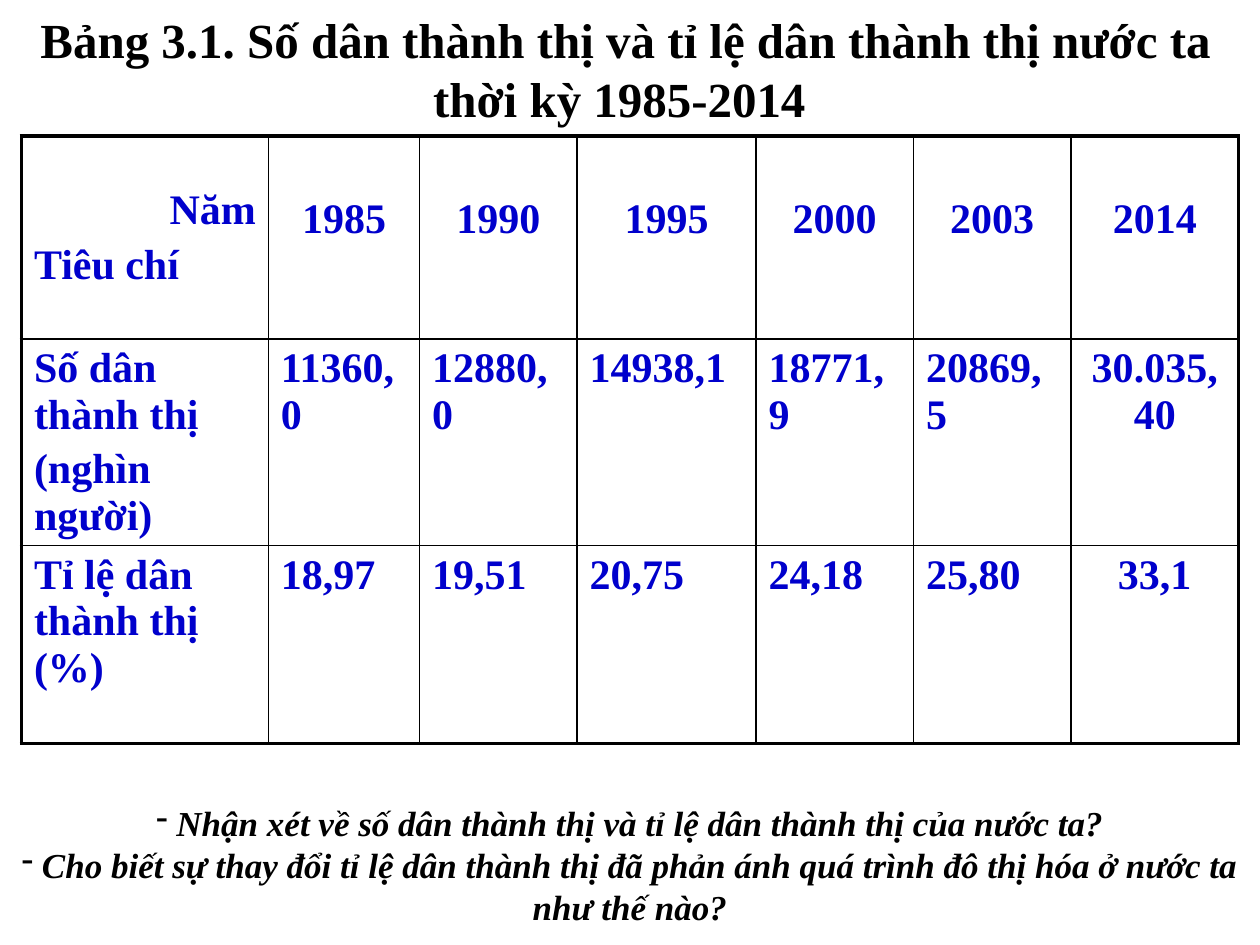
from dataclasses import dataclass

import pptx
import pptx.dml.color
import pptx.enum.text
import pptx.oxml
import pptx.oxml.ns
import pptx.util

Inches = pptx.util.Inches
Pt = pptx.util.Pt
RGBColor = pptx.dml.color.RGBColor
ALIGN = pptx.enum.text.PP_ALIGN
ANCHOR = pptx.enum.text.MSO_ANCHOR

FONT = "Times New Roman"
BLACK = RGBColor(0x00, 0x00, 0x00)
BLUE = RGBColor(0x00, 0x00, 0xCC)

OUTER, INNER = 2.25, 1
COL_WIDTHS = [1.96, 1.2, 1.25, 1.42, 1.25, 1.25, 1.33]
ROW_HEIGHTS = [1.61, 1.64, 1.57]


@dataclass
class Row:
    label: list[str]
    values: list[str]


ROWS = [
    Row(["Năm", "Tiêu chí"], ["1985", "1990", "1995", "2000", "2003", "2014"]),
    Row(["Số dân thành thị", "(nghìn người)"],
        ["11360,0", "12880,0", "14938,1", "18771,9", "20869,5", "30.035,40"]),
    Row(["Tỉ lệ dân thành thị (%)"],
        ["18,97", "19,51", "20,75", "24,18", "25,80", "33,1"]),
]
QUESTIONS = [
    " Nhận xét về số dân thành thị và tỉ lệ dân thành thị của nước ta?",
    " Cho biết sự thay đổi tỉ lệ dân thành thị đã phản ánh quá trình đô thị hóa "
    "ở nước ta như thế nào?",
]


def add_lines(tf, lines: list[str], size: float, color: RGBColor,
              align=ALIGN.LEFT, italic: bool = False, before: float = 0) -> None:
    """Write each line as one bold paragraph of the text frame."""
    for i, text in enumerate(lines):
        p = tf.add_paragraph() if i else tf.paragraphs[0]
        p.alignment = align
        p.space_before = Pt(before)
        r = p.add_run()
        r.text = text
        r.font.name = FONT
        r.font.size = Pt(size)
        r.font.bold = True
        r.font.italic = italic
        r.font.color.rgb = color


def set_border(cell, side: str, width: float) -> None:
    cell._tc.get_or_add_tcPr().append(pptx.oxml.parse_xml(
        f'<a:ln{side} {pptx.oxml.ns.nsdecls("a")} w="{Pt(width)}">'
        f'<a:solidFill><a:srgbClr val="{BLACK}"/></a:solidFill></a:ln{side}>'))


def add_bullet(p, char: str) -> None:
    pPr = p._p.get_or_add_pPr()
    pPr.set("marL", "0")
    pPr.set("indent", "0")
    for tag in ("<a:buFontTx {}/>", f'<a:buChar {{}} char="{char}"/>'):
        pPr.append(pptx.oxml.parse_xml(tag.format(pptx.oxml.ns.nsdecls("a"))))


def add_title(s, text: str) -> None:
    sp = s.shapes.title
    sp.left, sp.top = Inches(0), Inches(0)
    sp.width, sp.height = Inches(9.83), Inches(1.08)
    tf = sp.text_frame
    tf.word_wrap = True
    tf.auto_size = pptx.enum.text.MSO_AUTO_SIZE.NONE
    tf.vertical_anchor = ANCHOR.MIDDLE
    add_lines(tf, [text], 28, BLACK, ALIGN.CENTER)


def add_population_table(s) -> None:
    last_row, last_col = len(ROWS) - 1, len(COL_WIDTHS) - 1
    table = s.shapes.add_table(
        len(ROWS), len(COL_WIDTHS), Inches(0.17), Inches(1.08),
        Inches(sum(COL_WIDTHS)), Inches(sum(ROW_HEIGHTS))).table
    table.first_row = table.horz_banding = False
    for col, width in zip(table.columns, COL_WIDTHS):
        col.width = Inches(width)
    for i, row in enumerate(ROWS):
        table.rows[i].height = Inches(ROW_HEIGHTS[i])
        for j, lines in enumerate([row.label] + [[v] for v in row.values]):
            cell = table.cell(i, j)
            centred = j == last_col or (i == 0 and j > 0)
            add_lines(cell.text_frame, lines, 24, BLUE,
                      ALIGN.CENTER if centred else ALIGN.LEFT, before=4.8)
            edges = {"L": j == 0, "R": j == last_col, "T": i == 0, "B": i == last_row}
            for side, is_outer in edges.items():
                set_border(cell, side, OUTER if is_outer else INNER)
            cell.fill.background()
            if i == 0 and j > 0:
                cell.margin_top = Inches(0.48)
    corner = table.cell(0, 0)
    corner.vertical_anchor = ANCHOR.MIDDLE
    corner.text_frame.paragraphs[0].alignment = ALIGN.RIGHT


def add_questions(s) -> None:
    sp = s.shapes.add_textbox(Inches(0), Inches(6.31), Inches(10), Inches(1.11))
    tf = sp.text_frame
    tf.word_wrap = True
    add_lines(tf, QUESTIONS, 20, BLACK, ALIGN.CENTER, italic=True)
    for p in tf.paragraphs:
        add_bullet(p, "-")


def main() -> None:
    prs = pptx.Presentation()
    prs.slide_width, prs.slide_height = Inches(10), Inches(7.5)
    s = prs.slides.add_slide(prs.slide_layouts[5])
    add_population_table(s)
    add_title(s, " Bảng 3.1. Số dân thành thị và tỉ lệ dân thành thị nước ta "
                 "thời kỳ 1985-2014")
    add_questions(s)
    prs.save("out.pptx")


if __name__ == "__main__":
    main()
